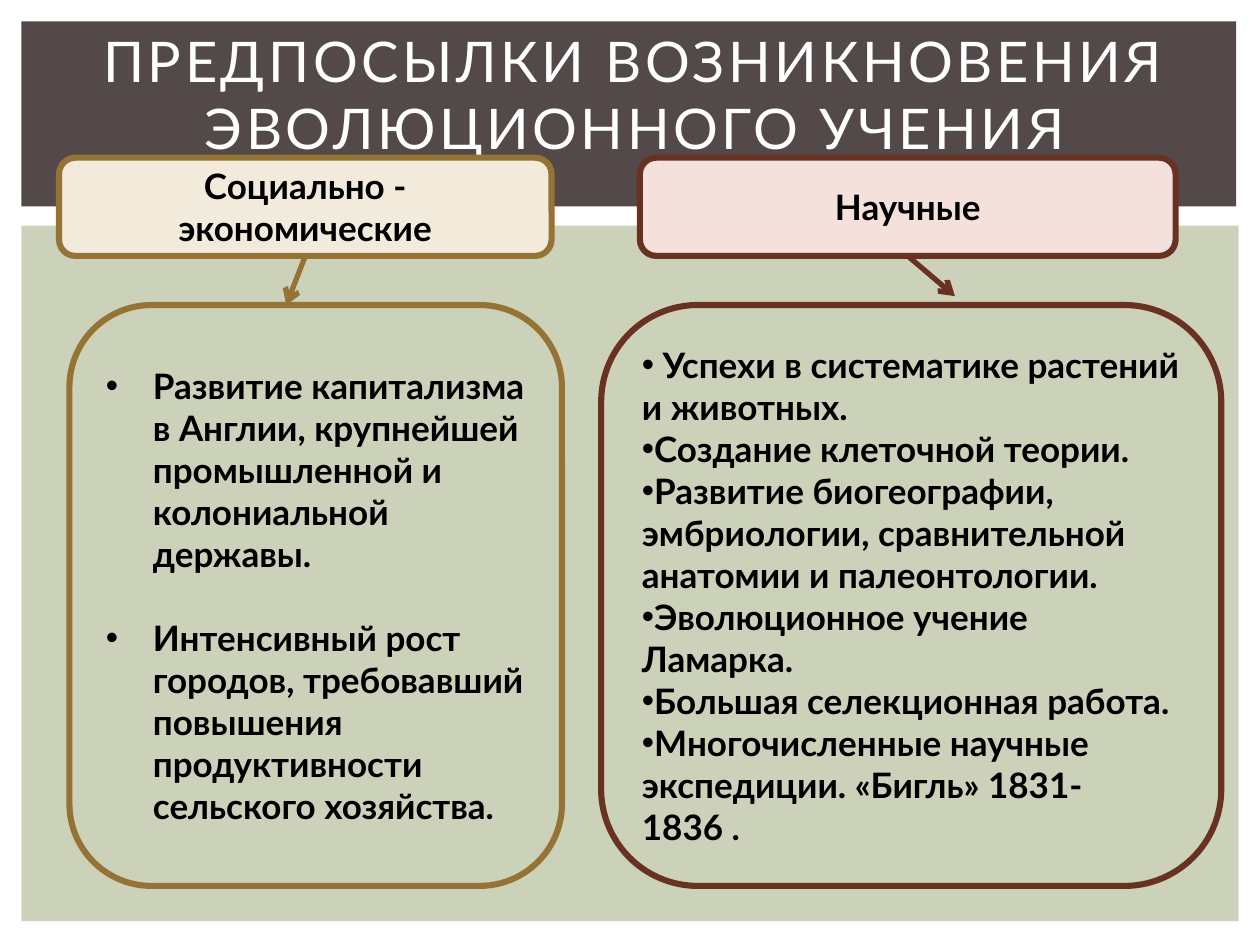
from dataclasses import dataclass

from lxml import etree
from pptx import Presentation
from pptx.dml.color import RGBColor
from pptx.enum.shapes import MSO_CONNECTOR, MSO_SHAPE
from pptx.enum.text import MSO_ANCHOR, PP_ALIGN
from pptx.oxml.ns import qn
from pptx.util import Cm, Pt

RECTANGLE, ROUNDED = MSO_SHAPE.RECTANGLE, MSO_SHAPE.ROUNDED_RECTANGLE
STRAIGHT = MSO_CONNECTOR.STRAIGHT
MIDDLE = MSO_ANCHOR.MIDDLE
LEFT, CENTER = PP_ALIGN.LEFT, PP_ALIGN.CENTER


@dataclass(frozen=True)
class Theme:
    font: str = "Lato"
    title_size: int = 32
    text_size: int = 20
    box_line: float = 3.5
    arrow_line: float = 3
    header: str = "534949"
    body: str = "CCD1B9"
    title: str = "FFFFFF"
    text: str = "000000"
    gold: str = "947335"
    gold_light: str = "F2EADB"
    brown: str = "693122"
    brown_light: str = "F4E1DC"


theme = Theme()


def add_box(slide, preset, left, top, width, height, fill=None, line=None):
    shape = slide.shapes.add_shape(preset, Cm(left), Cm(top), Cm(width), Cm(height))
    shape.shadow.inherit = False
    if fill:
        shape.fill.solid()
        shape.fill.fore_color.rgb = RGBColor.from_string(fill)
    else:
        shape.fill.background()
    if line:
        shape.line.color.rgb = RGBColor.from_string(line)
        shape.line.width = Pt(theme.box_line)
    else:
        shape.line.fill.background()
    return shape


def write_text(shape, *lines, size=theme.text_size, color=theme.text, bold=True,
               align=CENTER, tracking=0, bullet=None, indent=0, gap=0):
    frame = shape.text_frame
    frame.word_wrap = True
    frame.vertical_anchor = MIDDLE
    for index, line in enumerate(lines):
        paragraph = frame.add_paragraph() if index else frame.paragraphs[0]
        paragraph.alignment = align
        paragraph.space_before = Pt(gap if index else 0)
        if bullet:
            properties = paragraph._p.get_or_add_pPr()
            properties.set("marL", str(Cm(indent)))
            properties.set("indent", str(-Cm(indent)))
            etree.SubElement(properties, qn("a:buFont")).set("typeface", "Arial")
            etree.SubElement(properties, qn("a:buChar")).set("char", bullet)
        run = paragraph.add_run()
        run.text = line
        run.font.name = theme.font
        run.font.size = Pt(size)
        run.font.bold = bold
        run.font.color.rgb = RGBColor.from_string(color)
        if tracking:
            run._r.get_or_add_rPr().set("spc", str(tracking * 100))


presentation = Presentation()
presentation.slide_width, presentation.slide_height = Cm(25.4), Cm(19.05)
slide = presentation.slides.add_slide(presentation.slide_layouts[6])

# Background bands
add_box(slide, RECTANGLE, 0.43, 4.55, 24.54, 14.02, fill=theme.body)
add_box(slide, RECTANGLE, 0.43, 0.43, 24.49, 3.73, fill=theme.header)

# Title
title = slide.shapes.add_textbox(Cm(0.89), Cm(1.19), Cm(23.83), Cm(1.4))
write_text(title, "ПРЕДПОСЫЛКИ ВОЗНИКНОВЕНИЯ ЭВОЛЮЦИОННОГО УЧЕНИЯ",
           size=theme.title_size, color=theme.title, bold=False, tracking=2)

# Columns: label, panel with bullets, arrow between them
LABEL_TOP, LABEL_HEIGHT = 3.18, 1.98
PANEL_TOP, PANEL_HEIGHT = 6.15, 11.71
columns = [
    dict(label="Социально - экономические", line=theme.gold, fill=theme.gold_light,
         label_span=(1.19, 9.93), panel_span=(1.4, 9.93),
         arrow_end=(5.77, PANEL_TOP), layout=dict(indent=0.95, gap=24),
         points=["Развитие капитализма в Англии, крупнейшей промышленной и "
                 "колониальной державы.",
                 "Интенсивный рост городов, требовавший повышения "
                 "продуктивности сельского хозяйства."]),
    dict(label="Научные", line=theme.brown, fill=theme.brown_light,
         label_span=(12.9, 10.8), panel_span=(12.12, 12.5),
         arrow_end=(19.25, 5.97), layout={},
         points=[" Успехи в систематике растений и животных.",
                 "Создание клеточной теории.",
                 "Развитие биогеографии, эмбриологии, сравнительной анатомии "
                 "и палеонтологии.",
                 "Эволюционное учение Ламарка.",
                 "Большая селекционная работа.",
                 "Многочисленные научные экспедиции. «Бигль» 1831-1836 ."]),
]

for column in columns:
    left, width = column["label_span"]
    label = add_box(slide, ROUNDED, left, LABEL_TOP, width, LABEL_HEIGHT,
                    fill=column["fill"], line=column["line"])
    write_text(label, column["label"])

    panel_left, panel_width = column["panel_span"]
    panel = add_box(slide, ROUNDED, panel_left, PANEL_TOP, panel_width, PANEL_HEIGHT,
                    line=column["line"])
    write_text(panel, *column["points"], align=LEFT, bullet="•", **column["layout"])

    end_x, end_y = column["arrow_end"]
    arrow = slide.shapes.add_connector(
        STRAIGHT, Cm(left + width / 2 + 0.0), Cm(LABEL_TOP + LABEL_HEIGHT),
        Cm(end_x), Cm(end_y))
    arrow.line.color.rgb = RGBColor.from_string(column["line"])
    arrow.line.width = Pt(theme.arrow_line)
    etree.SubElement(arrow.line._get_or_add_ln(), qn("a:tailEnd")).set("type", "arrow")
    etree.SubElement(arrow._element.spPr, qn("a:effectLst"))

presentation.save("out.pptx")
